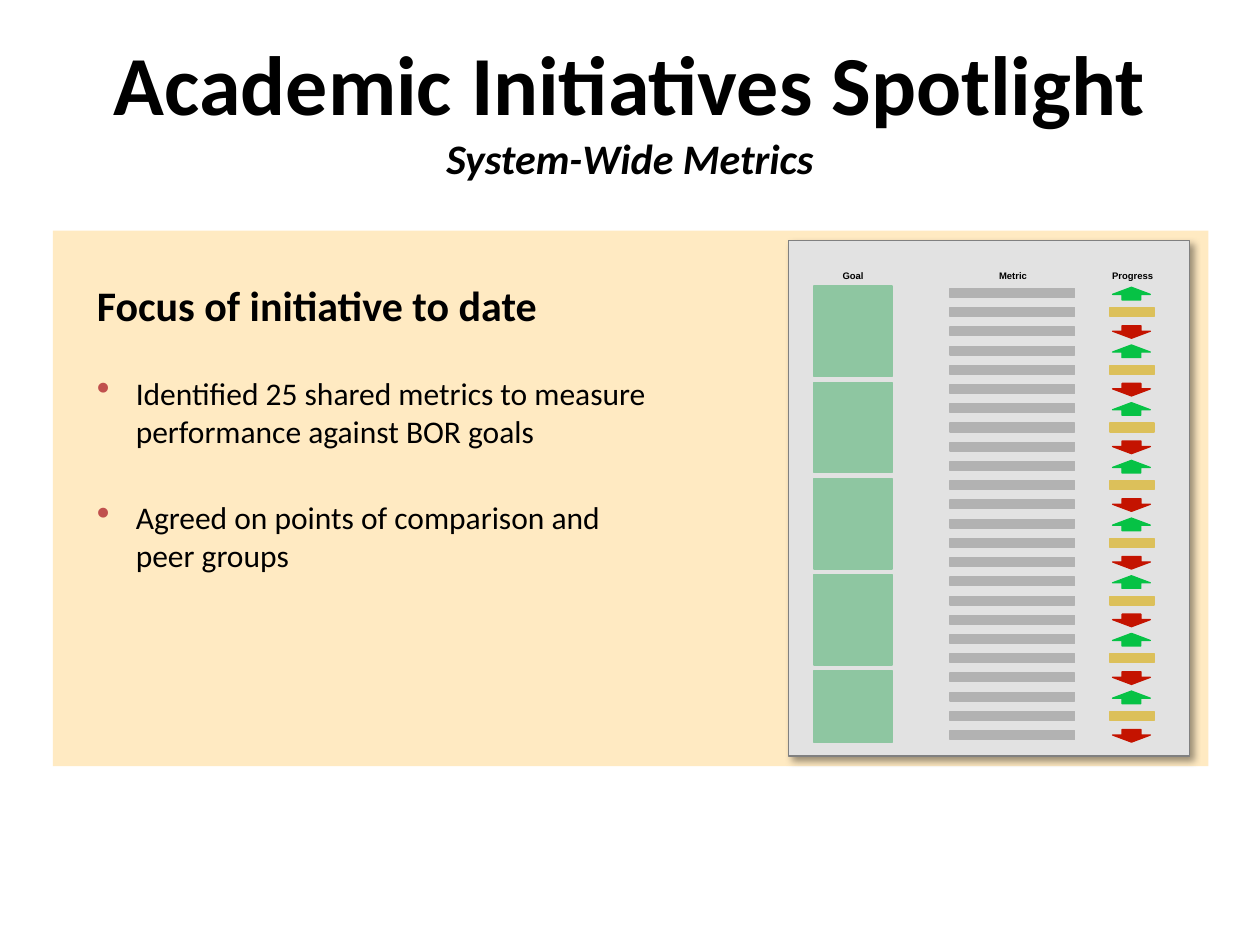
from lxml import etree
from pptx import Presentation
from pptx.dml.color import RGBColor
from pptx.enum import shapes, text
from pptx.oxml import ns
from pptx.util import Inches, Pt

RECT = shapes.MSO_SHAPE.RECTANGLE
ARROW = shapes.MSO_SHAPE.RIGHT_ARROW
GREEN, GOLD, RED = "06C245", "DCC05A", "C41300"


def color(code):
    return RGBColor.from_string(code)


def child(parent, tag, **attrs):
    """Append a DrawingML element."""
    item = etree.SubElement(parent, ns.qn("a:" + tag))
    for key, value in attrs.items():
        item.set(key, str(value))
    return item


class Deck:
    font = "Calibri"
    ink = "000000"
    accent = "C0504D"
    indent = 0.31

    def __init__(self, width, height):
        self.file = Presentation()
        self.file.slide_width = Inches(width)
        self.file.slide_height = Inches(height)
        self.slide = self.file.slides.add_slide(self.file.slide_layouts[6])
        self.home = self.slide.shapes

    def group(self):
        """Send the shapes that follow into a new group."""
        self.home = self.slide.shapes.add_group_shape().shapes

    def shape(self, kind, x, y, w, h, fill, line=None, turn=0):
        item = self.home.add_shape(kind, Inches(x), Inches(y), Inches(w), Inches(h))
        item.shadow.inherit = False
        item.fill.solid()
        item.fill.fore_color.rgb = color(fill)
        if line:
            item.line.color.rgb = color(line)
            item.line.width = Pt(0.75)
        else:
            item.line.fill.background()
        item.rotation = turn
        return item

    def fade(self, item, percent):
        """Set the opacity of a solid fill."""
        tone = item._element.spPr.find(ns.qn("a:solidFill"))[0]
        child(tone, "alpha", val=percent * 1000)

    def shade(self, item, percent, blur, gap, angle):
        """Give a shape an outer shadow."""
        effects = item._element.spPr.find(ns.qn("a:effectLst"))
        outer = child(effects, "outerShdw", blurRad=Pt(blur), dist=Pt(gap),
                      dir=angle * 60000, algn="tl", rotWithShape=0)
        tone = child(outer, "srgbClr", val=self.ink)
        child(tone, "alpha", val=percent * 1000)

    def box(self, x, y, w, h, inset=True):
        item = self.home.add_textbox(Inches(x), Inches(y), Inches(w), Inches(h))
        frame = item.text_frame
        frame.word_wrap = True
        if not inset:
            frame.margin_left = frame.margin_right = 0
            frame.margin_top = frame.margin_bottom = 0
        return frame

    def para(self, frame, words, size, bold=False, italic=False,
             center=False, bullet=False, before=0, font=None):
        line = frame.paragraphs[0]
        if line.runs:
            line = frame.add_paragraph()
        line.text = words
        if bullet:
            self.dot(line)
        if center:
            line.alignment = text.PP_ALIGN.CENTER
        if before:
            line.space_before = Pt(before)
        line.font.name = font or self.font
        line.font.size = Pt(size)
        line.font.bold = bold
        line.font.italic = italic
        line.font.color.rgb = color(self.ink)

    def dot(self, line):
        """Add a hanging bullet to a paragraph."""
        props = line._p.get_or_add_pPr()
        props.set("marL", str(Inches(self.indent)))
        props.set("indent", str(-Inches(self.indent)))
        child(child(props, "buClr"), "srgbClr", val=self.accent)
        child(props, "buSzPct", val=120000)
        child(props, "buChar", char="•")

    def save(self):
        self.file.save("out.pptx")


def card(deck):
    """Draw the scorecard of goals, metrics and progress marks."""
    deck.group()
    back = deck.shape(RECT, 6.26, 1.91, 3.18, 4.09, "E2E2E2", "808080")
    deck.shade(back, 40, 4, 3, 45)
    for name, x, w in (("Goal", 6.46, 0.62), ("Metric", 7.73, 0.62),
                       ("Progress", 8.61, 0.76)):
        head = deck.box(x, 2.14, w, 0.09, inset=False)
        deck.para(head, name, 5.4, bold=True, center=True, font="Arial")

    rows, top = 24, 2.29
    step = (5.8 - top) / (rows - 1)
    for goal in range(5):
        tall = 0.57 if goal == 4 else 0.72
        deck.shape(RECT, 6.46, 2.27 + goal * 5 * step, 0.62, tall, "8EC6A1", "8EC6A1")
    for row in range(rows):
        y = top + row * step
        deck.shape(RECT, 7.54, y, 0.99, 0.07, "B2B2B2", "B2B2B2")
        tone = (GREEN, GOLD, RED)[row % 3]
        if tone == GOLD:
            deck.shape(RECT, 8.81, y, 0.35, 0.07, tone, tone)
        else:
            turn = 270 if tone == GREEN else 90
            mark = deck.shape(ARROW, 8.93, y - 0.11, 0.1, 0.3, tone, tone, turn)
            mark.adjustments[0] = 0.5
            mark.adjustments[1] = 0.56


def main():
    deck = Deck(10, 7.5)
    panel = deck.shape(RECT, 0.42, 1.83, 9.17, 4.25, "FFBC37")
    deck.fade(panel, 30)

    title = deck.box(0, 0.25, 10, 1.21, inset=False)
    deck.para(title, "Academic Initiatives Spotlight", 48, bold=True, center=True)
    deck.para(title, "System-Wide Metrics", 24, bold=True, italic=True, center=True)

    body = deck.box(0.67, 2.17, 4.67, 4.08)
    deck.para(body, "Focus of initiative to date", 24, bold=True)
    deck.para(body, "Identified 25 shared metrics to measure performance against BOR goals",
              18, bullet=True, before=25)
    deck.para(body, "Agreed on points of comparison and peer groups",
              18, bullet=True, before=28)

    card(deck)
    deck.save()


if __name__ == "__main__":
    main()
